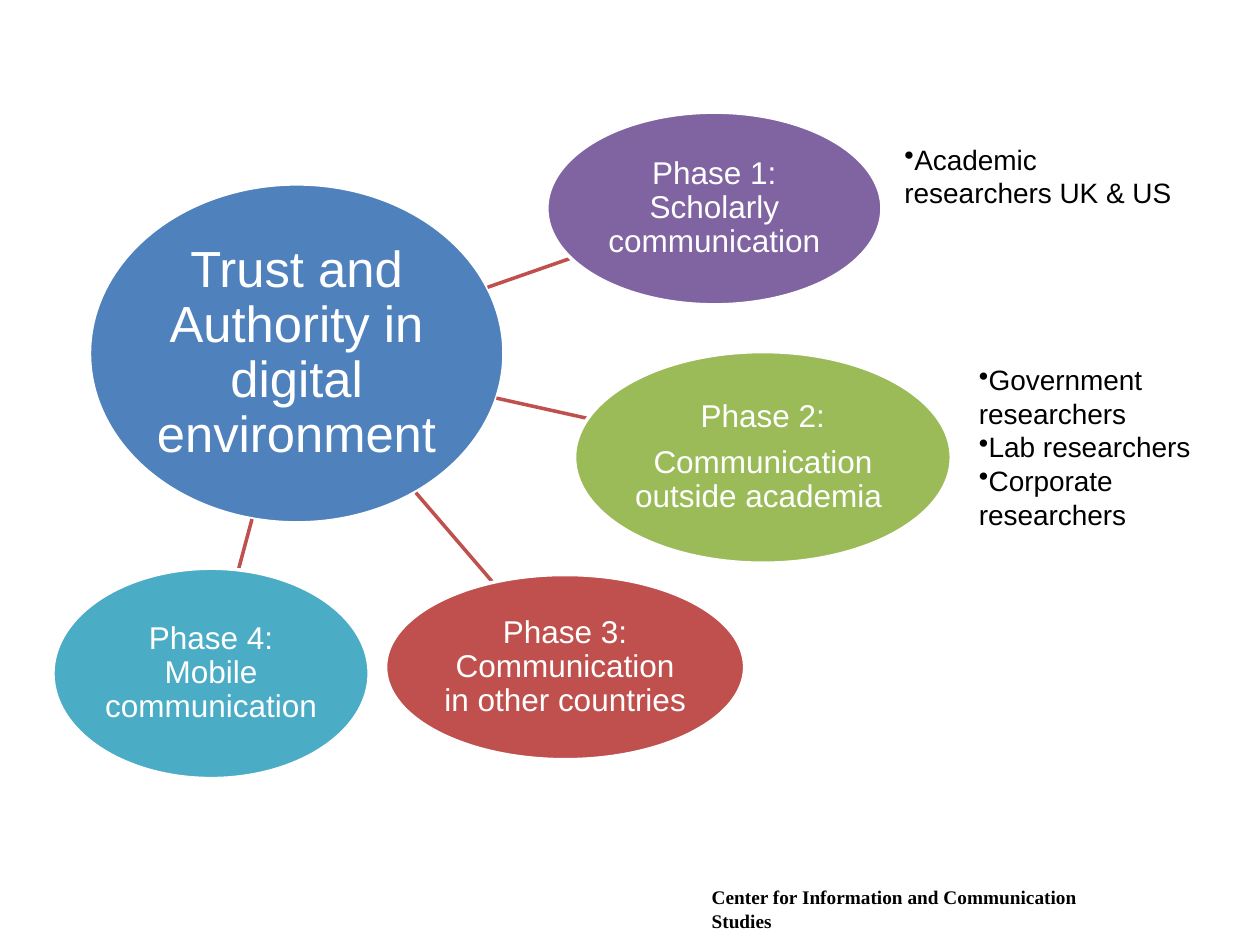
from lxml.etree import SubElement
from pptx import Presentation
from pptx.dml.color import RGBColor
from pptx.enum.shapes import MSO_CONNECTOR as CONNECTOR, MSO_SHAPE as SHAPE
from pptx.enum.text import MSO_ANCHOR as ANCHOR, PP_ALIGN as ALIGN
from pptx.oxml.ns import qn
from pptx.util import Inches, Pt

WHITE, BLACK, SPOKE = "FFFFFF", "000000", "C0504D"
HUB = (["Trust and Authority in digital environment"], "4F81BD", (0.71, 1.46, 3.29, 2.69))
PHASES = [
    (["Phase 1: Scholarly communication"], "8064A2",
     (4.34, 0.89, 2.66, 1.53), (3.87, 2.28, 4.53, 2.05)),
    (["Phase 2:", "Communication outside academia "], "9BBB59",
     (4.56, 2.79, 2.99, 1.68), (3.94, 3.16, 4.66, 3.32)),
    (["Phase 3: Communication in other countries"], "C0504D",
     (3.06, 4.56, 2.85, 1.47), (3.3, 3.91, 3.91, 4.62)),
    (["Phase 4: Mobile communication"], "4BACC6",
     (0.42, 4.51, 2.51, 1.67), (2, 4.12, 1.89, 4.53)),
]
GROUPS = [
    (["Academic researchers UK & US"], (7.08, 1.08, 2.33, 0.64)),
    (["Government researchers", "Lab researchers", "Corporate researchers"],
     (7.67, 2.83, 2.33, 1.45)),
]
FOOTER = (["Center for Information and Communication Studies"], (5.55, 6.98, 3.6, 0.28))


def rgb(value):
    return RGBColor.from_string(value)


def inches(values):
    return [Inches(value) for value in values]


def write(frame, lines, size, color, font="Arial", bold=False, bullet=None):
    frame.word_wrap = True
    for i, line in enumerate(lines):
        paragraph = frame.paragraphs[0] if i == 0 else frame.add_paragraph()
        paragraph.text = line
        if bullet:
            props = paragraph._p.get_or_add_pPr()
            props.set("marL", "0")
            props.set("indent", "0")
            SubElement(props, qn("a:buChar"), char=bullet)
        paragraph.font.size = Pt(size)
        paragraph.font.name = font
        paragraph.font.bold = bold
        paragraph.font.color.rgb = rgb(color)


def add_bubble(slide, lines, color, box, size, inset):
    bubble = slide.shapes.add_shape(SHAPE.OVAL, *inches(box))
    bubble.shadow.inherit = False
    bubble.fill.solid()
    bubble.fill.fore_color.rgb = rgb(color)
    bubble.line.color.rgb = rgb(WHITE)
    bubble.line.width = Pt(2)
    frame = bubble.text_frame
    frame.margin_left = frame.margin_right = Inches(inset)
    frame.margin_top = frame.margin_bottom = Inches(inset)
    frame.vertical_anchor = ANCHOR.MIDDLE
    write(frame, lines, size, WHITE)
    for i, paragraph in enumerate(frame.paragraphs):
        paragraph.alignment = ALIGN.CENTER
        paragraph.line_spacing = 0.9
        if i:
            paragraph.space_before = Pt(7)


def add_spoke(slide, ends):
    spoke = slide.shapes.add_connector(CONNECTOR.STRAIGHT, *inches(ends))
    spoke.line.color.rgb = rgb(SPOKE)
    spoke.line.width = Pt(2)
    SubElement(spoke._element.spPr, qn("a:effectLst"))


def add_note(slide, lines, box, size, **style):
    note = slide.shapes.add_textbox(*inches(box))
    write(note.text_frame, lines, size, BLACK, **style)


def main():
    deck = Presentation()
    deck.slide_width, deck.slide_height = Inches(10), Inches(7.5)
    slide = deck.slides.add_slide(deck.slide_layouts[6])
    add_note(slide, *FOOTER, 11, font="Times New Roman", bold=True)
    add_bubble(slide, *HUB, 29, 0.02)
    for lines, color, box, ends in PHASES:
        add_spoke(slide, ends)
        add_bubble(slide, lines, color, box, 18, 0.01)
    for lines, box in GROUPS:
        add_note(slide, lines, box, 16, bullet="•")
    deck.save("out.pptx")


if __name__ == "__main__":
    main()
